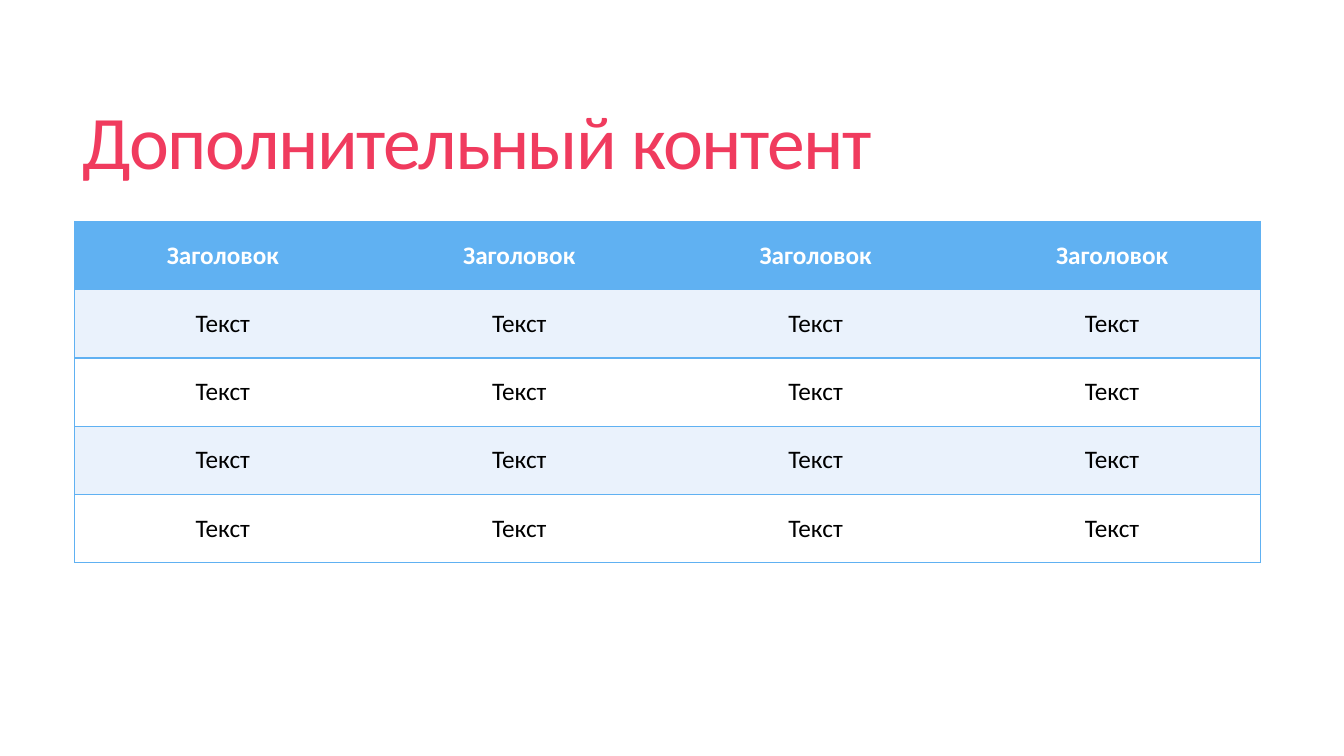
from dataclasses import dataclass

from lxml.etree import SubElement
from pptx import Presentation
from pptx.dml.color import RGBColor
from pptx.enum.text import MSO_ANCHOR, MSO_AUTO_SIZE, PP_ALIGN
from pptx.oxml.ns import qn
from pptx.slide import Slide
from pptx.table import _Cell
from pptx.text.text import _Paragraph
from pptx.util import Cm, Pt


@dataclass(frozen=True)
class Theme:
    font: str = "Calibri"
    accent: str = "F03B5E"
    blue: str = "60B1F2"
    band: str = "EAF2FC"
    white: str = "FFFFFF"
    black: str = "000000"
    title_size: int = 54
    cell_size: int = 18
    border: int = 1


@dataclass(frozen=True)
class RowStyle:
    text: str
    fill: str
    color: str
    bold: bool


THEME = Theme()
HEADER = RowStyle("Заголовок", THEME.blue, THEME.white, True)
BANDED = RowStyle("Текст", THEME.band, THEME.black, False)
PLAIN = RowStyle("Текст", THEME.white, THEME.black, False)
ROWS = [HEADER, BANDED, PLAIN, BANDED, PLAIN]
COLUMNS = 4
COLUMN_WIDTH = Cm(7.47)
ROW_HEIGHT = Cm(1.72)


def set_attributes(target: object, values: dict) -> None:
    for name, value in values.items():
        setattr(target, name, value)


def write(p: _Paragraph, text: str, size: int, color: str, bold: bool = False) -> None:
    r = p.add_run()
    r.text = text
    set_attributes(r.font, {"name": THEME.font, "size": Pt(size), "bold": bold})
    r.font.color.rgb = RGBColor.from_string(color)


def set_borders(cell: _Cell, visible: dict[str, bool]) -> None:
    tc_pr = cell._tc.get_or_add_tcPr()
    for i, (side, shown) in enumerate(visible.items()):
        ln = SubElement(tc_pr, qn(f"a:ln{side}"), w=str(Pt(THEME.border)))
        tc_pr.insert(i, ln)
        if shown:
            fill = SubElement(ln, qn("a:solidFill"))
            SubElement(fill, qn("a:srgbClr"), val=THEME.blue)
        else:
            SubElement(ln, qn("a:noFill"))


def draw_title(s: Slide, text: str) -> None:
    sp = s.shapes.title
    set_attributes(sp, {"left": Cm(1.83), "top": Cm(1.4), "width": Cm(29.92), "height": Cm(4.6)})
    tf = sp.text_frame
    set_attributes(tf, {
        "word_wrap": True,
        "auto_size": MSO_AUTO_SIZE.NONE,
        "vertical_anchor": MSO_ANCHOR.MIDDLE,
    })
    p = tf.paragraphs[0]
    set_attributes(p, {"alignment": PP_ALIGN.LEFT, "line_spacing": 0.85})
    write(p, text, THEME.title_size, THEME.accent)
    p.runs[0].font._element.set("spc", "-120")


def draw_cell(cell: _Cell, style: RowStyle, column: int) -> None:
    cell.vertical_anchor = MSO_ANCHOR.MIDDLE
    cell.fill.solid()
    cell.fill.fore_color.rgb = RGBColor.from_string(style.fill)
    set_borders(cell, {"L": column == 0, "R": column == COLUMNS - 1, "T": True, "B": True})
    p = cell.text_frame.paragraphs[0]
    p.alignment = PP_ALIGN.CENTER
    write(p, style.text, THEME.cell_size, style.color, style.bold)


def draw_table(s: Slide) -> None:
    table = s.shapes.add_table(
        len(ROWS), COLUMNS, Cm(1.88), Cm(5.58),
        COLUMN_WIDTH * COLUMNS, ROW_HEIGHT * len(ROWS),
    ).table
    for column in table.columns:
        column.width = COLUMN_WIDTH
    for i, style in enumerate(ROWS):
        table.rows[i].height = ROW_HEIGHT
        for j in range(COLUMNS):
            draw_cell(table.cell(i, j), style, j)


def main() -> None:
    prs = Presentation()
    set_attributes(prs, {"slide_width": Cm(33.87), "slide_height": Cm(19.05)})
    s = prs.slides.add_slide(prs.slide_layouts[5])
    draw_title(s, "Дополнительный контент")
    draw_table(s)
    prs.save("out.pptx")


if __name__ == "__main__":
    main()
